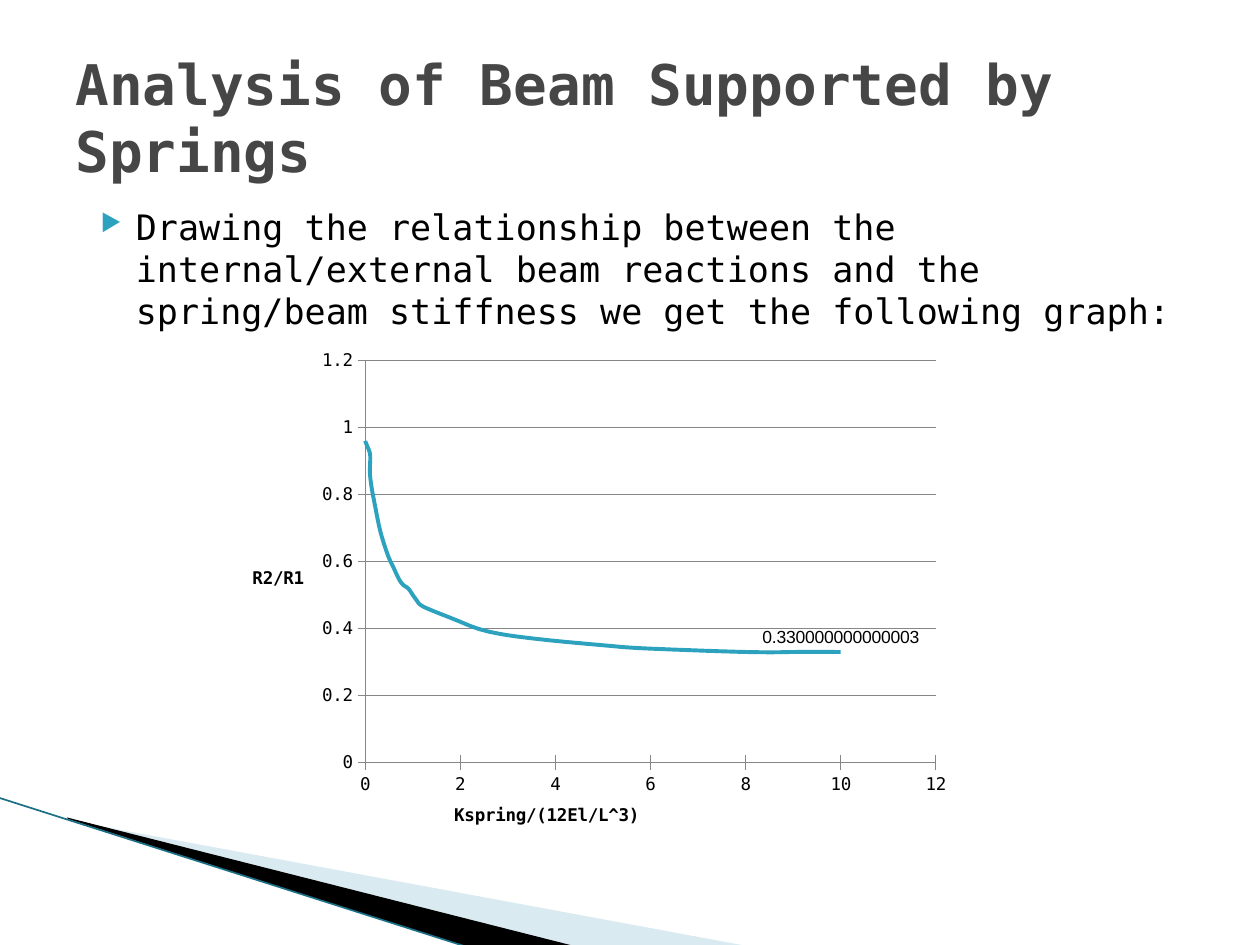
from lxml import etree
from pptx import Presentation
from pptx.chart.data import XyChartData
from pptx.dml.color import RGBColor
from pptx.enum.chart import XL_CHART_TYPE as Kind, XL_LABEL_POSITION as Spot
from pptx.enum.chart import XL_TICK_MARK as Tick
from pptx.enum.shapes import MSO_CONNECTOR as Link
from pptx.enum.text import MSO_ANCHOR as Anchor
from pptx.oxml import parse_xml
from pptx.oxml.ns import nsdecls, qn
from pptx.util import Cm, Pt

FONT = "DejaVu Sans Mono"
HUE = {
    "title": "464646",
    "text": "000000",
    "accent": "2DA2BF",
    "pale": "A0CBDC",
    "dark": "000000",
    "edge": "1B6F84",
    "grid": "868686",
}
RATIO = [
    (0, 1), (0, 0.96), (0.1, 0.92), (0.1, 0.86), (0.2, 0.77), (0.3, 0.7),
    (0.4, 0.65), (0.5, 0.61), (0.6, 0.58), (0.7, 0.55), (0.8, 0.53),
    (0.9, 0.52), (1, 0.5), (1.1, 0.48), (1.3, 0.46), (2, 0.42), (3, 0.38),
    (5, 0.35), (6, 0.34), (8, 0.33), (9, 0.33), (10, 0.330000000000003),
]


def rgb(name):
    return RGBColor.from_string(HUE[name])


def style(font, size, hue="text", bold=False, face=FONT):
    font.name, font.size, font.bold = face, Pt(size), bold
    font.color.rgb = rgb(hue)


def add_wedge(slide, points, hue, alpha=None):
    spots = [(Cm(x), Cm(y)) for x, y in points]
    pen = slide.shapes.build_freeform(*spots[0])
    pen.add_line_segments(spots[1:], close=True)
    shape = pen.convert_to_shape()
    shape.shadow.inherit = False
    shape.line.fill.background()
    shape.fill.solid()
    shape.fill.fore_color.rgb = rgb(hue)
    if alpha:
        tint = shape.fill._xPr.find(".//" + qn("a:srgbClr"))
        etree.SubElement(tint, qn("a:alpha"), val=str(alpha * 1000))


def add_edge(slide, start, end):
    line = slide.shapes.add_connector(Link.STRAIGHT, *map(Cm, start + end))
    line.line.color.rgb = rgb("edge")
    line.line.width = Pt(0.95)
    etree.SubElement(line._element.spPr, qn("a:effectLst"))


def add_text(slide, box, text, size, hue, bold=False, anchor=Anchor.TOP):
    frame = slide.shapes.add_textbox(*map(Cm, box)).text_frame
    frame.word_wrap = True
    frame.vertical_anchor = anchor
    para = frame.paragraphs[0]
    run = para.add_run()
    run.text = text
    style(run.font, size, hue, bold)
    return para


def add_bullet(para):
    props = para._p.get_or_add_pPr()
    props.set("marL", str(Cm(1.02)))
    props.set("indent", str(Cm(-0.71)))
    tint = etree.SubElement(props, qn("a:buClr"))
    etree.SubElement(tint, qn("a:srgbClr"), val=HUE["accent"])
    etree.SubElement(props, qn("a:buSzPct"), val="68000")
    etree.SubElement(props, qn("a:buChar"), char="▶")


def layout(x, y, w=None, h=None):
    """Return a manual chart layout, in shares of the chart's size."""
    inner = '<c:layoutTarget val="inner"/>' if w else ""
    size = f'<c:w val="{w}"/><c:h val="{h}"/>' if w else ""
    return parse_xml(
        f'<c:layout {nsdecls("c")}><c:manualLayout>{inner}'
        '<c:xMode val="edge"/><c:yMode val="edge"/>'
        f'<c:x val="{x}"/><c:y val="{y}"/>{size}'
        "</c:manualLayout></c:layout>"
    )


def place(node, *share):
    """Swap the layout of a plot area or an axis title."""
    for old in node.findall(qn("c:layout")):
        node.remove(old)
    text = node.find(qn("c:tx"))
    node.insert(0 if text is None else 1, layout(*share))


def set_axis(axis, top, step, title, spot):
    axis.minimum_scale, axis.maximum_scale = 0, top
    axis.major_unit = step
    axis.major_tick_mark, axis.minor_tick_mark = Tick.CROSS, Tick.NONE
    axis.format.line.color.rgb = rgb("grid")
    style(axis.tick_labels.font, 10)
    frame = axis.axis_title.text_frame
    frame._txBody.bodyPr.set("rot", "0")
    run = frame.paragraphs[0].add_run()
    run.text = title
    style(run.font, 10, bold=True)
    place(axis.axis_title._element, *spot)


def add_graph(slide, box):
    data = XyChartData()
    curve = data.add_series("Series 1")
    for x, y in RATIO:
        curve.add_data_point(x, y)
    chart = slide.shapes.add_chart(
        Kind.XY_SCATTER_SMOOTH_NO_MARKERS, *map(Cm, box), data
    ).chart
    chart.has_legend = chart.has_title = False
    style(chart.font, 10)
    place(chart._chartSpace.chart.plotArea, 0.198, 0.048, 0.679, 0.798)

    across, up = chart.category_axis, chart.value_axis
    set_axis(across, 12, 2, "Kspring/(12El/L^3)", (0.3, 0.92))
    set_axis(up, 1.2, 0.2, "R2/R1", (0.06, 0.45))
    across.has_major_gridlines = False
    up.has_major_gridlines = True
    up.major_gridlines.format.line.color.rgb = rgb("grid")

    chart.plots[0].vary_by_categories = False
    series = chart.plots[0].series[0]
    series._element.get_or_add_smooth().val = True
    series.format.line.color.rgb = rgb("accent")
    series.format.line.width = Pt(2.25)
    label = series.points[len(RATIO) - 1].data_label
    style(label.font, 10, face="Arial")
    label.position = Spot.ABOVE


def main():
    deck = Presentation()
    deck.slide_width, deck.slide_height = Cm(25.4), Cm(19.05)
    slide = deck.slides.add_slide(deck.slide_layouts[6])

    add_wedge(slide, [(1.4, 16.54), (15.11, 19.08), (11.58, 19.08),
                      (1.4, 16.51)], "pale", 40)
    add_wedge(slide, [(1.35, 16.48), (11.61, 19.08), (9.45, 19.1),
                      (1.37, 16.51)], "dark")
    add_edge(slide, (-0.03, 16.08), (9.45, 19.1))

    body = add_text(
        slide, (1.47, 4.01, 22.86, 12.57),
        "Drawing the relationship between the internal/external beam "
        "reactions and the spring/beam stiffness we get the following graph:",
        20, "text",
    )
    add_bullet(body)
    add_text(slide, (1.27, 0.76, 22.86, 3.18),
             "Analysis of Beam Supported by Springs",
             32, "title", True, Anchor.MIDDLE)
    add_graph(slide, (4.01, 6.78, 16.94, 10.16))
    deck.save("out.pptx")


if __name__ == "__main__":
    main()
